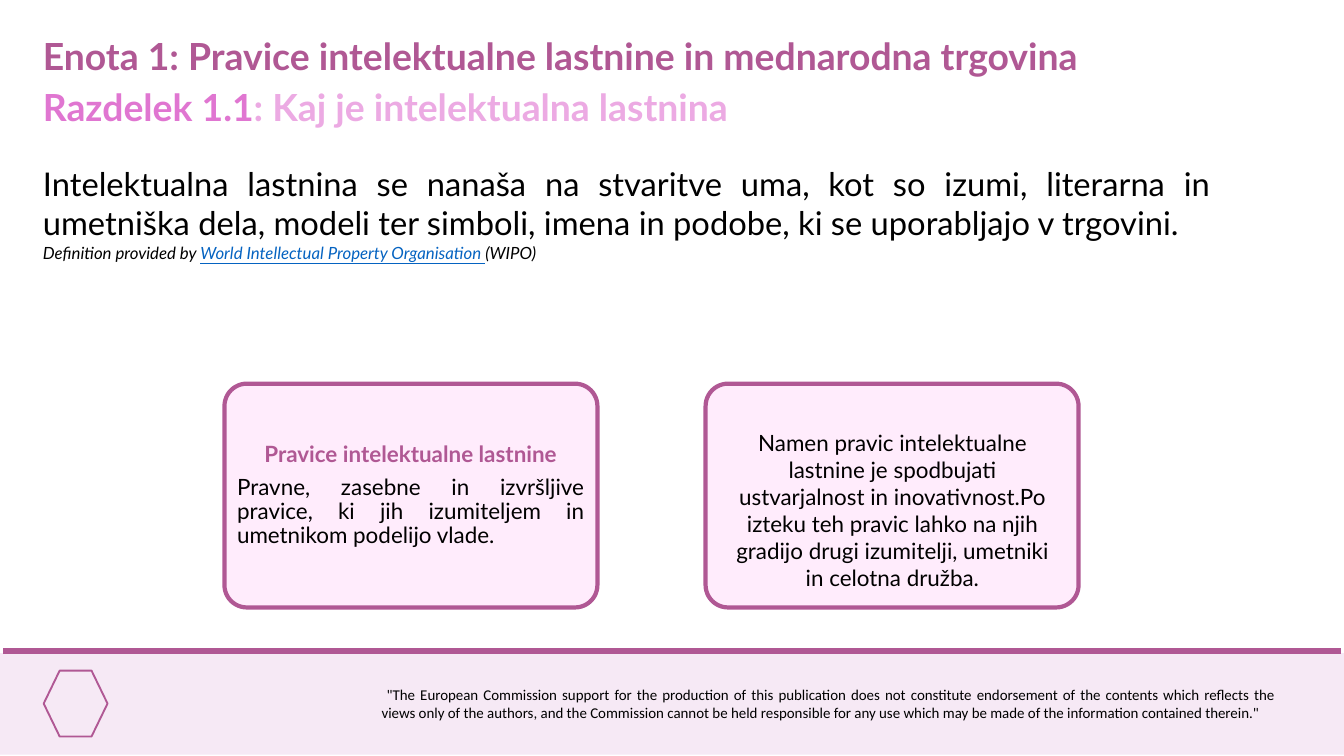
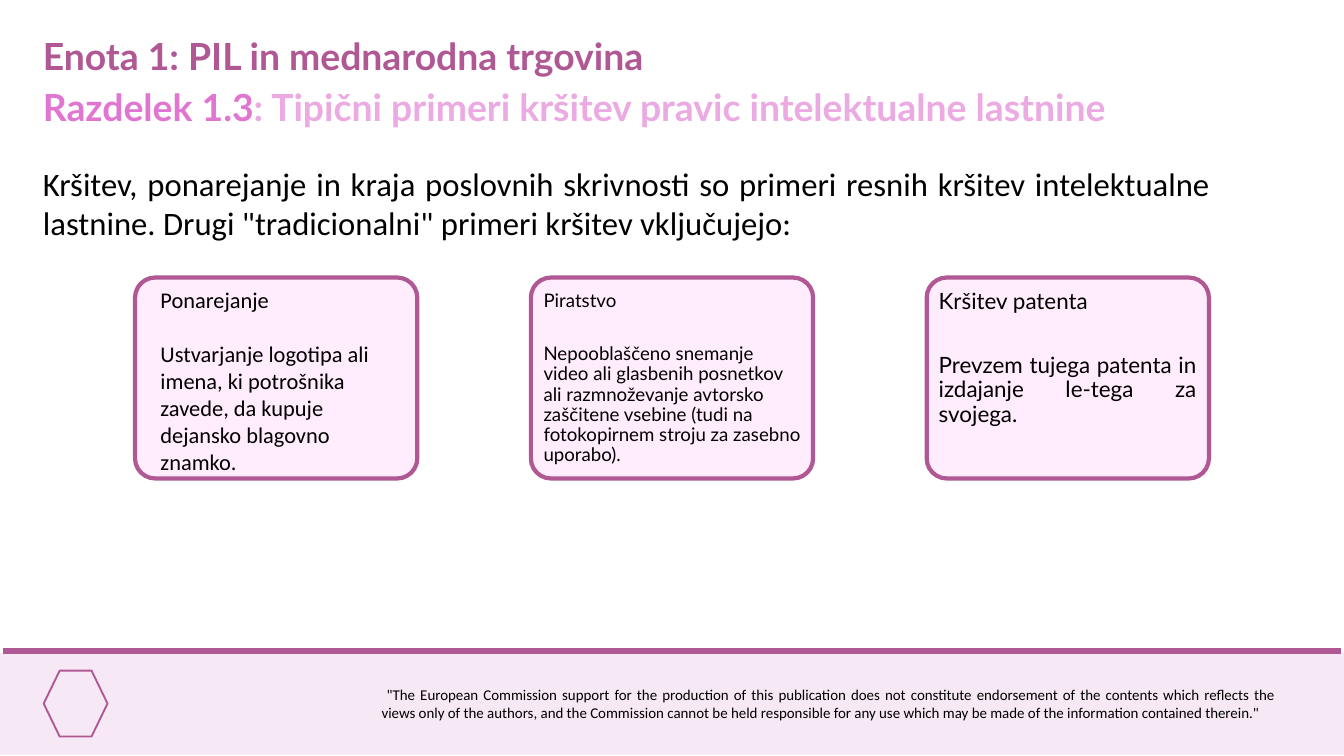
from pptx import Presentation
from pptx.dml.color import RGBColor
from pptx.enum.shapes import MSO_CONNECTOR as CONN, MSO_SHAPE as SHAPE
from pptx.enum.text import MSO_ANCHOR as ANCHOR, PP_ALIGN as ALIGN
from pptx.oxml.ns import qn
from pptx.util import Pt
from lxml import etree

PX = 9144  # 100 px to the inch
PLUM, ORCHID, PINK = "B05894", "E076D1", "ECAAE3"
CARD, BAND, BLACK, LINK = "FFECFC", "F6E9F5", "000000", "0563C1"
LEFT, CENTER, JUSTIFY = ALIGN.LEFT, ALIGN.CENTER, ALIGN.JUSTIFY

DISCLAIMER = (
    ' "The European Commission support for the production of this publication '
    "does not constitute endorsement of the contents which reflects the views only "
    "of the authors, and the Commission cannot be held responsible for any use which "
    'may be made of the information contained therein."'
)


def rgb(code):
    return RGBColor.from_string(code)


def add_text(s, box, paragraphs, wrap=True, anchor=ANCHOR.TOP, inset=5, **base):
    """Add a text box; each paragraph is a list of (text, format) runs.

    The first run of a paragraph also sets its alignment and spacing.
    """
    tf = s.shapes.add_textbox(*[v * PX for v in box]).text_frame
    tf.word_wrap, tf.vertical_anchor = wrap, anchor
    tf.margin_left = tf.margin_right = 10 * PX
    tf.margin_top = tf.margin_bottom = inset * PX
    for i, runs in enumerate(paragraphs):
        p = tf.paragraphs[0] if i == 0 else tf.add_paragraph()
        style = {**base, **runs[0][1]}
        p.alignment = style.get("align", LEFT)
        p.line_spacing = style.get("spacing", 1.0)
        p.space_before = Pt(style.get("before", 0))
        for text, own in runs:
            style = {**base, **own}
            r = p.add_run()
            r.text = text
            r.font.name = style.get("font", "Lato")
            r.font.size = Pt(style["size"])
            r.font.bold = style.get("bold", False)
            r.font.italic = style.get("italic", False)
            r.font.underline = style.get("underline", False)
            r.font.color.rgb = rgb(style.get("color", BLACK))


# Formats of the text inside the cards
tight = dict(inset=10, spacing=0.9)
note = dict(size=18, italic=True)

slides = [
    dict(
        unit="Enota 1: Pravice intelektualne lastnine in mednarodna trgovina",
        section=("Razdelek 1.1", ": Kaj je intelektualna lastnina"),
        lead_font="Lato",
        lead=[
            [("Intelektualna lastnina se nanaša na stvaritve uma, kot so izumi, "
              "literarna in umetniška dela, modeli ter simboli, imena in podobe, "
              "ki se uporabljajo v trgovini.", {})],
            [("Definition provided by ", note),
             ("World Intellectual Property Organisation ",
              dict(note, color=LINK, underline=True)),
             ("(WIPO)", note)],
        ],
        grid=dict(x=334, y=571, w=555, h=333, step=716),
        cards=[
            ((343, 581, 536, 314), [
                [("Pravice intelektualne lastnine",
                  dict(align=CENTER, color=PLUM, bold=True))],
                [("Pravne, zasebne in izvršljive pravice, ki jih izumiteljem in "
                  "umetnikom podelijo vlade.", dict(before=8.4))],
            ], dict(tight, size=24, align=JUSTIFY, anchor=ANCHOR.MIDDLE)),
            ((1078, 634, 500, 252), [
                [("Namen pravic intelektualne lastnine je spodbujati ustvarjalnost "
                  "in inovativnost.Po izteku teh pravic lahko na njih gradijo drugi "
                  "izumitelji, umetniki in celotna družba.", {})],
            ], dict(size=24, align=CENTER)),
        ],
    ),
    dict(
        unit="Enota 1: PIL in mednarodna trgovina",
        section=("Razdelek 1.3", ": Tipični primeri kršitev pravic intelektualne lastnine"),
        lead_font="Calibri",
        lead=[
            [("Kršitev, ponarejanje in kraja poslovnih skrivnosti so primeri resnih "
              "kršitev intelektualne lastnine. Drugi \"tradicionalni\" primeri "
              "kršitev vključujejo:", {})],
        ],
        grid=dict(x=201, y=413, w=420, h=299, step=589),
        cards=[
            ((229, 421, 366, 293), [
                [("Ponarejanje", {})],
                [("Ustvarjanje logotipa ali imena, ki potrošnika zavede, da kupuje "
                  "dejansko blagovno znamko.", dict(before=29))],
            ], dict(size=24, font="Calibri")),
            ((799, 422, 403, 282), [
                [("Piratstvo", {})],
                [("Nepooblaščeno snemanje video ali glasbenih posnetkov ali "
                  "razmnoževanje avtorsko zaščitene vsebine (tudi na fotokopirnem "
                  "stroju za zasebno uporabo).", dict(before=35.6))],
            ], dict(tight, size=20, anchor=ANCHOR.MIDDLE)),
            ((1387, 422, 403, 282), [
                [("Kršitev patenta", {})],
                [("Prevzem tujega patenta in izdajanje le-tega za svojega.",
                  dict(before=42.7))],
            ], dict(tight, size=24, align=JUSTIFY)),
        ],
    ),
]

prs = Presentation()
prs.slide_width, prs.slide_height = 2000 * PX, 1125 * PX

for content in slides:
    s = prs.slides.add_slide(prs.slide_layouts[6])

    # Footer band with its rule, emblem and disclaimer
    band = s.shapes.add_shape(SHAPE.RECTANGLE, 0, 972 * PX, 2000 * PX, 151 * PX)
    band.shadow.inherit = False
    band.fill.solid()
    band.fill.fore_color.rgb = rgb(BAND)
    band.line.fill.background()

    rule = s.shapes.add_connector(CONN.STRAIGHT, 5 * PX, 969 * PX, 1995 * PX, 969 * PX)
    rule.line.color.rgb = rgb(PLUM)
    rule.line.width = Pt(6.75)
    etree.SubElement(rule._element.spPr, qn("a:effectLst"))

    emblem = s.shapes.add_shape(SHAPE.HEXAGON, 65 * PX, 998 * PX, 95 * PX, 98 * PX)
    emblem.shadow.inherit = False
    emblem.fill.background()
    emblem.line.color.rgb = rgb(PLUM)
    emblem.line.width = Pt(2)

    add_text(s, (558, 1015, 1350, 64), [[(DISCLAIMER, {})]],
             size=16, font="Calibri", align=JUSTIFY)

    # Unit title, section title and lead paragraph
    add_text(s, (54, 44, 1575, 77), [[(content["unit"], {})]],
             wrap=False, size=40, bold=True, color=PLUM)
    number, name = content["section"]
    add_text(s, (54, 121, 1646, 77),
             [[(number, dict(color=ORCHID)), (name, dict(color=PINK))]],
             size=40, bold=True)
    add_text(s, (54, 239, 1758, 158), content["lead"],
             size=35, font=content["lead_font"], align=JUSTIFY)

    # Row of evenly spaced cards
    g = content["grid"]
    for i, (box, paragraphs, style) in enumerate(content["cards"]):
        sp = s.shapes.add_shape(SHAPE.ROUNDED_RECTANGLE, (g["x"] + i * g["step"]) * PX,
                                g["y"] * PX, g["w"] * PX, g["h"] * PX)
        sp.adjustments[0] = 0.1
        sp.shadow.inherit = False
        sp.fill.solid()
        sp.fill.fore_color.rgb = rgb(CARD)
        sp.line.color.rgb = rgb(PLUM)
        sp.line.width = Pt(4.5)
        add_text(s, box, paragraphs, **style)

prs.save("out.pptx")
